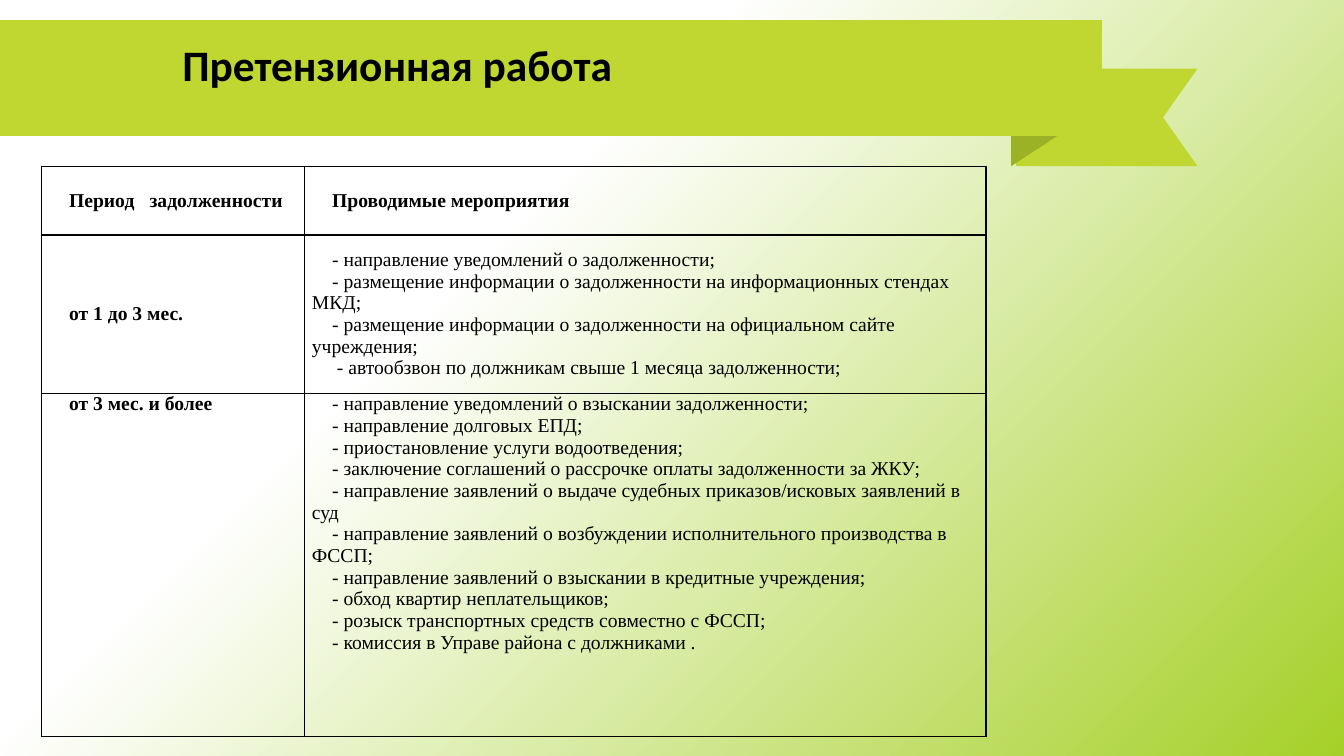
from lxml import etree
from pptx import Presentation
from pptx.dml.color import RGBColor
from pptx.enum.text import MSO_ANCHOR, PP_ALIGN
from pptx.oxml import parse_xml
from pptx.oxml.ns import nsdecls, qn
from pptx.util import Cm, Pt

TOP, MIDDLE = MSO_ANCHOR.TOP, MSO_ANCHOR.MIDDLE
LEFT = PP_ALIGN.LEFT
BLACK = RGBColor(0x00, 0x00, 0x00)
LIME = RGBColor(0xBF, 0xD7, 0x30)
OLIVE = RGBColor(0x9C, 0xB2, 0x26)
WHITE = RGBColor(0xFF, 0xFF, 0xFF)
GREEN = RGBColor(0xA5, 0xD0, 0x28)

BACKGROUND_STOPS = [(0, WHITE), (35, WHITE), (100, GREEN)]
BACKGROUND_ANGLE = 45

TITLE = "Претензионная работа"
HEADER = ["Период\tзадолженности", "Проводимые мероприятия"]
EARLY_MEASURES = [
    "- направление уведомлений о задолженности;",
    "- размещение информации о задолженности на информационных стендах МКД;",
    "- размещение информации о задолженности на официальном сайте учреждения;",
    "- автообзвон по должникам свыше 1 месяца задолженности;",
]
LATE_MEASURES = [
    "- направление уведомлений о взыскании задолженности;",
    "- направление долговых ЕПД;",
    "- приостановление услуги водоотведения;",
    "- заключение соглашений о рассрочке оплаты задолженности за ЖКУ;",
    "- направление заявлений о выдаче судебных приказов/исковых заявлений в суд",
    "- направление заявлений о возбуждении исполнительного производства в ФССП;",
    "- направление заявлений о взыскании в кредитные учреждения;",
    "- обход квартир неплательщиков;",
    "- розыск транспортных средств совместно с ФССП;",
    "- комиссия в Управе района с должниками .",
]
# Each row: height in cm, vertical anchor, lines of the two cells
ROWS = [
    (1.73, MIDDLE, [HEADER[:1], HEADER[1:]]),
    (3.99, MIDDLE, [["от 1 до 3 мес."], EARLY_MEASURES]),
    (8.64, TOP, [["от 3 мес. и более"], LATE_MEASURES]),
]
COLUMN_WIDTHS = [6.63, 17.17]
TABLE_LEFT, TABLE_TOP = 1.05, 4.19
FIRST_LINE_INDENT, DEEPER_INDENT = 0.51, 0.63
HEADER_TAB = 2.64

# Ribbon outlines in cm, from back to front
RIBBON = [
    (LIME, [(30.18, 1.73), (25.6, 1.73), (25.6, 4.19), (30.18, 4.19), (29.31, 2.96)]),
    (OLIVE, [(27.15, 1.73), (26.59, 1.73), (25.48, 3.15), (25.48, 4.19), (26.87, 3.28)]),
    (LIME, [(0, 3.43), (0, 0.5), (27.76, 0.5), (27.76, 3.43)]),
]


def paint_background(slide):
    fill = slide.background.fill
    fill.gradient()
    gradient = slide.background._cSld.find(".//" + qn("a:gradFill"))
    for child in list(gradient):
        gradient.remove(child)
    stops = etree.SubElement(gradient, qn("a:gsLst"))
    for percent, color in BACKGROUND_STOPS:
        stop = etree.SubElement(stops, qn("a:gs"), pos=str(percent * 1000))
        etree.SubElement(stop, qn("a:srgbClr"), val=str(color))
    etree.SubElement(gradient, qn("a:lin"), ang=str(BACKGROUND_ANGLE * 60000), scaled="0")


def add_outline(slide, color, points):
    corners = [(Cm(x), Cm(y)) for x, y in points]
    builder = slide.shapes.build_freeform(*corners[0])
    builder.add_line_segments(corners[1:], close=True)
    shape = builder.convert_to_shape()
    shape.shadow.inherit = False
    shape.fill.solid()
    shape.fill.fore_color.rgb = color
    shape.line.fill.background()


def write_paragraph(paragraph, text, *, font="Times New Roman", size=14, bold=False,
                    indent=0, tab=None, line_spacing=None):
    paragraph.text = text
    paragraph.alignment = LEFT
    properties = paragraph._p.get_or_add_pPr()
    properties.set("marL", "0")
    properties.set("indent", str(Cm(indent)))
    if tab:
        tabs = etree.SubElement(properties, qn("a:tabLst"))
        etree.SubElement(tabs, qn("a:tab"), pos=str(Cm(tab)), algn="l")
    if line_spacing:
        paragraph.line_spacing = line_spacing
    for run in paragraph.runs:
        run.font.name = font
        run.font.size = Pt(size)
        run.font.bold = bold
        run.font.color.rgb = BLACK


def add_borders(cell):
    properties = cell._tc.get_or_add_tcPr()
    for side in ("lnL", "lnR", "lnT", "lnB"):
        properties.append(parse_xml(
            f'<a:{side} {nsdecls("a")} w="{Pt(1)}"><a:solidFill>'
            f'<a:srgbClr val="{BLACK}"/></a:solidFill></a:{side}>'))


def fill_cell(cell, lines, anchor, bold):
    add_borders(cell)
    cell.fill.background()
    cell.vertical_anchor = anchor
    cell.margin_left = cell.margin_right = Cm(0.18)
    cell.margin_top = cell.margin_bottom = 0
    frame = cell.text_frame
    for number, line in enumerate(lines):
        paragraph = frame.add_paragraph() if number else frame.paragraphs[0]
        deeper = "автообзвон" in line
        write_paragraph(paragraph, line, bold=bold,
                        indent=DEEPER_INDENT if deeper else FIRST_LINE_INDENT,
                        tab=HEADER_TAB if "\t" in line else None)


def add_measures_table(slide):
    height = sum(row[0] for row in ROWS)
    table = slide.shapes.add_table(
        len(ROWS), len(COLUMN_WIDTHS), Cm(TABLE_LEFT), Cm(TABLE_TOP),
        Cm(sum(COLUMN_WIDTHS)), Cm(height)).table
    table.first_row = table.horz_banding = False
    for column, width in zip(table.columns, COLUMN_WIDTHS):
        column.width = Cm(width)
    for row_number, (row_height, anchor, cells) in enumerate(ROWS):
        table.rows[row_number].height = Cm(row_height)
        for column_number, lines in enumerate(cells):
            bold = row_number == 0 or column_number == 0
            fill_cell(table.cell(row_number, column_number), lines, anchor, bold)


def place_title(slide):
    title = slide.shapes.title
    title.left, title.top, title.width, title.height = Cm(4.34), Cm(0.97), Cm(24.21), Cm(4.57)
    title.text_frame.vertical_anchor = TOP
    write_paragraph(title.text_frame.paragraphs[0], TITLE, font="Calibri", size=31,
                    bold=True, line_spacing=0.9)
    title.element.getparent().append(title.element)  # in front of the ribbon


def main():
    presentation = Presentation()
    presentation.slide_width, presentation.slide_height = Cm(33.87), Cm(19.05)
    slide = presentation.slides.add_slide(presentation.slide_layouts[5])
    paint_background(slide)
    for color, points in RIBBON:
        add_outline(slide, color, points)
    place_title(slide)
    add_measures_table(slide)
    presentation.save("out.pptx")


if __name__ == "__main__":
    main()
